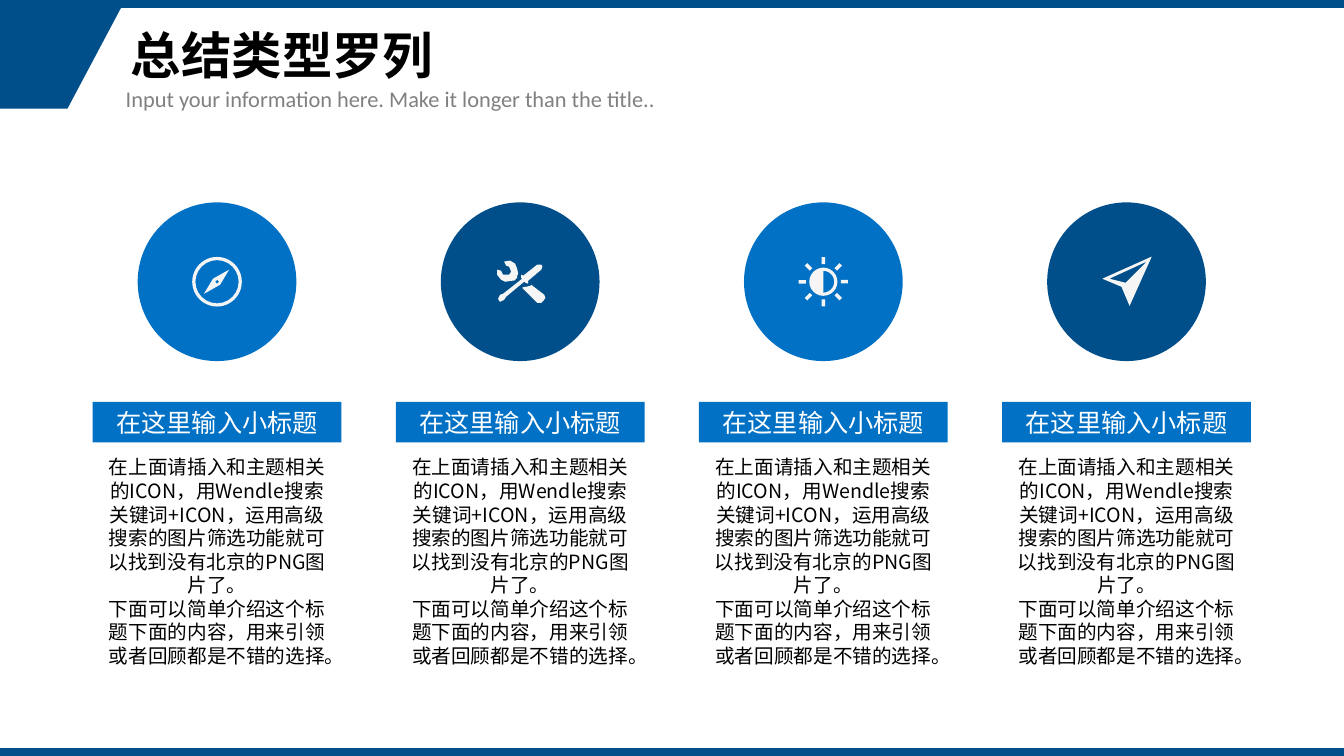
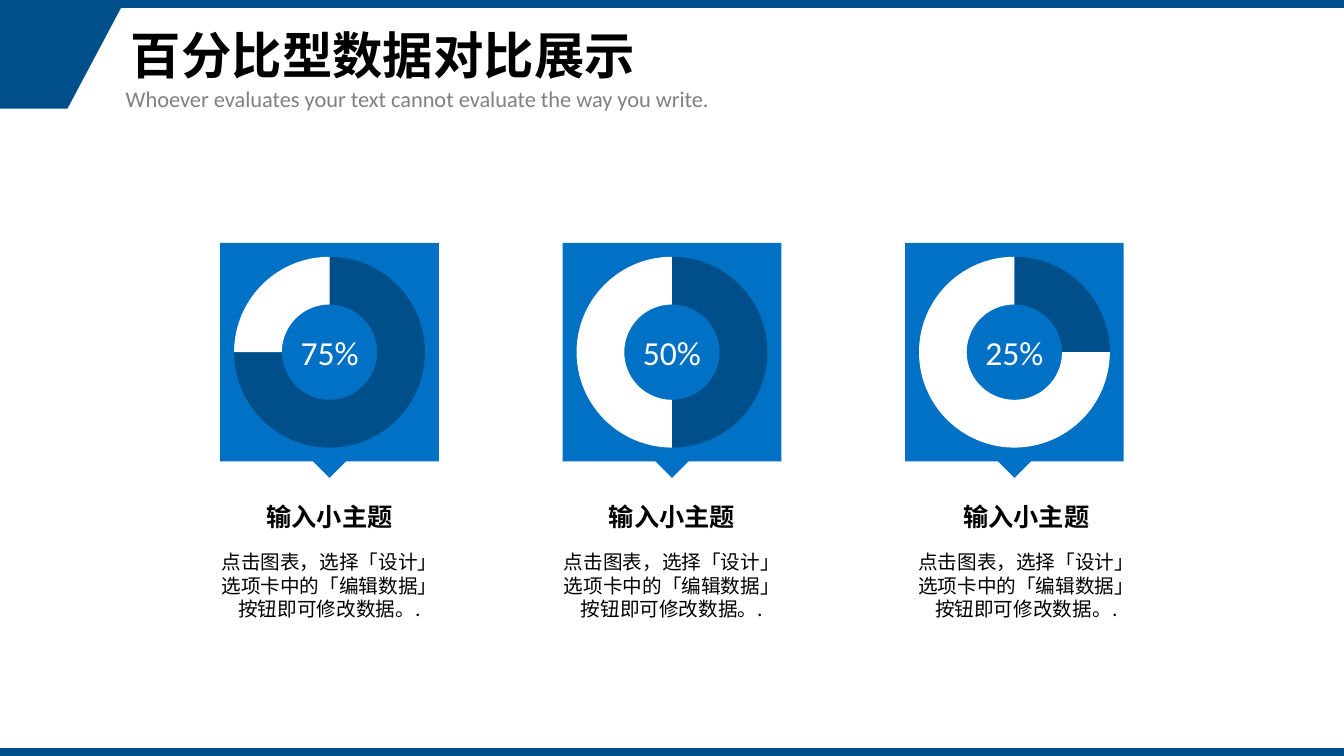
from math import cos, pi, sin

from lxml import etree
from pptx import Presentation
from pptx.chart.data import CategoryChartData
from pptx.dml.color import RGBColor
from pptx.enum.chart import XL_CHART_TYPE
from pptx.enum.shapes import MSO_SHAPE
from pptx.enum.text import MSO_ANCHOR, PP_ALIGN
from pptx.oxml.ns import qn
from pptx.util import Cm, Pt

RECTANGLE = MSO_SHAPE.RECTANGLE
OVAL = MSO_SHAPE.OVAL
DONUT = MSO_SHAPE.DONUT
RIGHT_TRIANGLE = MSO_SHAPE.RIGHT_TRIANGLE
DOUGHNUT = XL_CHART_TYPE.DOUGHNUT
LEFT, CENTER = PP_ALIGN.LEFT, PP_ALIGN.CENTER
TOP, MIDDLE = MSO_ANCHOR.TOP, MSO_ANCHOR.MIDDLE

NAVY = RGBColor(0x00, 0x4F, 0x8A)
BLUE = RGBColor(0x01, 0x71, 0xC5)
PALE = RGBColor(0xF5, 0xF5, 0xF5)
GREY = RGBColor(0x80, 0x80, 0x80)
BLACK = RGBColor(0x00, 0x00, 0x00)
WHITE = RGBColor(0xFF, 0xFF, 0xFF)

CHINESE_FONT = "Noto Sans CJK SC"
LATIN_FONT = "Calibri"

PAGE_W, PAGE_H = 33.87, 19.05
BAND_H = 0.2
COLUMN_W = 6.27
ICON_UNIT = Cm(2.54) / 100

SUMMARY_TITLE = ("总结类型罗列",
                 "Input your information here. Make it longer than the title..")
SUMMARY_HEADING = "在这里输入小标题"
SUMMARY_BODY = [
    "在上面请插入和主题相关的ICON，用Wendle搜索关键词+ICON，运用高级搜索的图片筛选功能就可以找到没有北京的PNG图片了。",
    "下面可以简单介绍这个标题下面的内容，用来引领或者回顾都是不错的选择。",
]

PERCENT_TITLE = ("百分比型数据对比展示",
                 "Whoever evaluates your text cannot evaluate the way you write.")
PERCENT_HEADING = "输入小主题"
PERCENT_BODY = ["点击图表，选择「设计」选项卡中的「编辑数据」按钮即可修改数据。."]
PERCENTAGES = [(75, 0), (50, 0), (25, 0.3)]

CORNER = [(0, 20), (305, 20), (170, 274), (0, 274)]
NEEDLE = [
    [(-13, 12), (3, 3), (12, -12), (-4, -3)],
    [(0, -2), (2, 0), (0, 2), (-2, 0)],
]
WRENCH_HEAD = [
    (-19, -2), (-15, 0), (-8, -1), (-6, -1), (-3, -4), (-3, -6), (-2, -8),
    (-3, -13), (-5, -18), (-10, -21), (-16, -20), (-14, -16), (-11, -15),
    (-9, -10), (-11, -7), (-17, -7), (-19, -11), (-23, -12), (-23, -7),
]
WRENCH_HANDLE = [
    (24, 13), (11, 3), (10, 4), (6, 5), (4, 5), (2, 6), (17, 21), (21, 21),
    (23, 19), (25, 16),
]
SCREWDRIVER = [
    (5, 1), (8, 2), (8, -1), (21, -12), (22, -15), (21, -17), (17, -17),
    (3, -6), (1, -7), (1, -4), (2, -3), (-17, 12), (-20, 13), (-22, 17),
    (-20, 20), (-16, 18), (-14, 15), (4, 0),
]
PAPER_PLANE = [
    [(-24, -3), (-5, 5), (3, 24), (25, -25)],
    [(-1, 1), (-17, -3), (20, -20)],
]
HALF_DISC = [(-12 * sin(step * pi / 12), -12 * cos(step * pi / 12))
             for step in range(13)]


def paint(shape, color):
    shape.shadow.inherit = False
    shape.fill.solid()
    shape.fill.fore_color.rgb = color
    shape.line.fill.background()
    return shape


def add_preset(slide, kind, left, top, width, height, color):
    return paint(slide.shapes.add_shape(
        kind, Cm(left), Cm(top), Cm(width), Cm(height)), color)


def add_centered(slide, kind, x, y, width, height, color):
    return add_preset(slide, kind, x - width / 2, y - height / 2,
                      width, height, color)


def add_outline(slide, contours, x, y, unit, color):
    builder = slide.shapes.build_freeform(*contours[0][0], scale=unit)
    builder.add_line_segments(contours[0][1:], close=True)
    for contour in contours[1:]:
        builder.move_to(*contour[0])
        builder.add_line_segments(contour[1:], close=True)
    paint(builder.convert_to_shape(Cm(x), Cm(y)), color)


def write(shape, lines, size, color, font=CHINESE_FONT, bold=False,
          align=CENTER, anchor=TOP, wrap=True, spacing=None):
    frame = shape.text_frame
    frame.text = "\n".join(lines)
    frame.word_wrap = wrap
    frame.vertical_anchor = anchor
    for paragraph in frame.paragraphs:
        paragraph.alignment = align
        paragraph.line_spacing = spacing
        for run in paragraph.runs:
            run.font.name = font
            run.font.size = Pt(size)
            run.font.bold = bold
            run.font.color.rgb = color
            east_asian = etree.Element(qn("a:ea"), typeface=font)
            run.font._element.find(qn("a:latin")).addnext(east_asian)


def add_text(slide, lines, left, top, width, height, size, color, **style):
    box = slide.shapes.add_textbox(Cm(left), Cm(top), Cm(width), Cm(height))
    write(box, lines, size, color, **style)


def add_page(deck, title, subtitle):
    slide = deck.slides.add_slide(deck.slide_layouts[6])
    add_outline(slide, [CORNER], 0, 0, Cm(0.01), NAVY)
    for top in (0, PAGE_H - BAND_H):
        add_preset(slide, RECTANGLE, 0, top, PAGE_W, BAND_H, NAVY)
    add_text(slide, [title], 3.05, 0.2, 28.5, 2.54, 36, BLACK, bold=True,
             align=LEFT, anchor=MIDDLE, spacing=0.9)
    add_text(slide, [subtitle], 2.92, 2.03, 19.8, 0.94, 16, GREY,
             font=LATIN_FONT, align=LEFT)
    return slide


def add_ring(slide, x, y, diameter, thickness):
    ring = add_centered(slide, DONUT, x, y, diameter, diameter, PALE)
    ring.adjustments[0] = thickness / diameter


def draw_compass(slide, x, y):
    add_ring(slide, x, y, 1.25, 0.08)
    add_outline(slide, NEEDLE, x, y, ICON_UNIT, PALE)


def draw_tools(slide, x, y):
    for part in (WRENCH_HEAD, WRENCH_HANDLE, SCREWDRIVER):
        add_outline(slide, [part], x, y, ICON_UNIT, PALE)


def draw_sun(slide, x, y):
    for angle in range(0, 360, 45):
        turn = angle * pi / 180
        ray = add_centered(slide, RECTANGLE, x + 0.53 * sin(turn),
                           y - 0.53 * cos(turn), 0.09, 0.18, PALE)
        ray.rotation = angle
    add_ring(slide, x, y, 0.71, 0.08)
    add_outline(slide, [HALF_DISC], x, y, ICON_UNIT, PALE)


def draw_plane(slide, x, y):
    add_outline(slide, PAPER_PLANE, x, y, ICON_UNIT, PALE)


def build_summary(deck):
    slide = add_page(deck, *SUMMARY_TITLE)
    circle_y = 7.1
    icons = (draw_compass, draw_tools, draw_sun, draw_plane)
    for index, draw_icon in enumerate(icons):
        x = 5.47 + index * 7.64
        left = x - COLUMN_W / 2
        add_centered(slide, OVAL, x, circle_y, 4, 4, (BLUE, NAVY)[index % 2])
        draw_icon(slide, x, circle_y)
        heading = add_preset(slide, RECTANGLE, left, 10.13, COLUMN_W, 1.02, BLUE)
        write(heading, [SUMMARY_HEADING], 18, WHITE, wrap=False)
        add_text(slide, SUMMARY_BODY, left, 11.35, COLUMN_W, 5.64, 14, BLACK)


def fill_chart_area(chart, color):
    properties = etree.Element(qn("c:spPr"))
    fill = etree.SubElement(properties, qn("a:solidFill"))
    etree.SubElement(fill, qn("a:srgbClr"), val=str(color))
    line = etree.SubElement(properties, qn("a:ln"))
    etree.SubElement(line, qn("a:noFill"))
    chart.element.find(qn("c:chart")).addnext(properties)


def add_doughnut(slide, percent, left, top, size):
    data = CategoryChartData(number_format="0")
    data.categories = ["1", "2"]
    data.add_series("Series 1", (percent, 100 - percent))
    chart = slide.shapes.add_chart(
        DOUGHNUT, Cm(left), Cm(top), Cm(size), Cm(size), data).chart
    chart.has_title = False
    chart.has_legend = False
    chart.font.name = LATIN_FONT
    chart.font.size = Pt(10)
    chart.font.color.rgb = BLACK
    plot = chart.plots[0]
    for index, color in enumerate((NAVY, WHITE)):
        wedge = plot.series[0].points[index].format
        wedge.fill.solid()
        wedge.fill.fore_color.rgb = color
        wedge.line.fill.background()
    chart.element.find(".//" + qn("c:holeSize")).set("val", "80")
    fill_chart_area(chart, BLUE)


def build_percentages(deck):
    slide = add_page(deck, *PERCENT_TITLE)
    chart_size, chart_top = 5.51, 6.12
    for index, (percent, caption_shift) in enumerate(PERCENTAGES):
        x = PAGE_W / 2 + (index - 1) * 8.63
        left = x + caption_shift - COLUMN_W / 2
        add_doughnut(slide, percent, x - chart_size / 2, chart_top, chart_size)
        add_text(slide, [f"{percent}%"], x - 1.15, 8.23, 2.3, 1.27, 24, WHITE,
                 font=LATIN_FONT, wrap=False)
        pointer = add_centered(slide, RIGHT_TRIANGLE, x, 11.61, 0.61, 0.61, BLUE)
        pointer.rotation = 315
        add_text(slide, [PERCENT_HEADING], left, 12.52, COLUMN_W, 1.02, 18,
                 BLACK, bold=True, wrap=False)
        add_text(slide, PERCENT_BODY, left, 13.74, COLUMN_W, 2.06, 14, BLACK)


def main():
    deck = Presentation()
    deck.slide_width, deck.slide_height = Cm(PAGE_W), Cm(PAGE_H)
    build_summary(deck)
    build_percentages(deck)
    deck.save("out.pptx")


if __name__ == "__main__":
    main()
